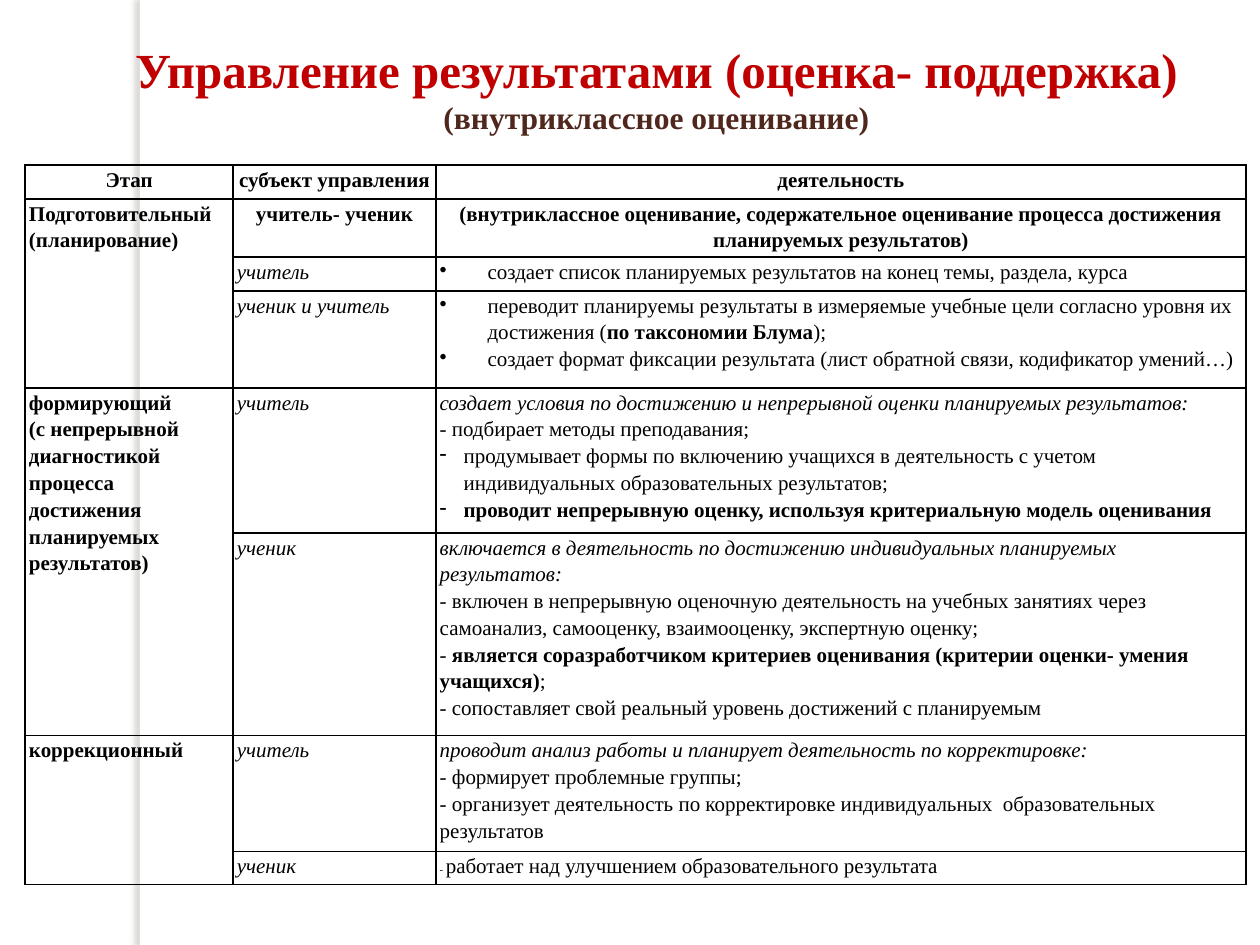
from dataclasses import dataclass

from lxml import etree
from pptx import Presentation
from pptx import util as u
from pptx.dml import color
from pptx.enum import shapes, text
from pptx.oxml import ns


@dataclass(frozen=True)
class Theme:
    font: str = "Times New Roman"
    ink: str = "000000"
    red: str = "C00000"
    brown: str = "4F271C"
    paper: str = "FFFFFF"
    shade: str = "736F63"
    head: int = 28
    sub: int = 18
    body: int = 12
    tiny: int = 6


THEME = Theme()
COLS = [1.65, 1.61, 6.43]
ROWS = [0.27, 0.13, 0.27, 0.77, 0.99, 1.27, 0.78, 0.26]
SPANS = [(1, 3), (4, 5), (6, 7)]
LISTS = {"• ": ("•", 0.38), "– ": ("-", 0.19)}

# Marks: ^ centred, "• " and "– " list items, *bold*, _italic_, ~tiny~
CELLS = [
    [["^*Этап*"], ["^*субъект управления*"], ["^*деятельность*"]],
    [["*Подготовительный*", "*(планирование)*"],
     ["^*учитель- ученик*"],
     ["^*(внутриклассное оценивание, содержательное оценивание процесса "
      "достижения планируемых результатов)*"]],
    [[], ["_учитель_"],
     ["• создает список планируемых результатов на конец темы, раздела, курса"]],
    [[], ["_ученик и учитель_"],
     ["• переводит планируемы результаты в измеряемые учебные цели согласно "
      "уровня их достижения (*по таксономии Блума*);",
      "• создает формат фиксации результата (лист обратной связи, "
      "кодификатор умений…)"]],
    [["*формирующий*",
      "*(с непрерывной диагностикой процесса достижения планируемых результатов)*"],
     ["_учитель_"],
     ["_создает условия по достижению и непрерывной оценки планируемых "
      "результатов:_",
      "- подбирает методы преподавания;",
      "– продумывает формы по включению учащихся в деятельность с учетом "
      "индивидуальных образовательных результатов;",
      "– *проводит непрерывную оценку, используя критериальную модель оценивания*"]],
    [[], ["_ученик_"],
     ["_включается в деятельность по достижению индивидуальных планируемых "
      "результатов:_",
      "- включен в непрерывную оценочную деятельность на учебных занятиях через "
      "самоанализ, самооценку, взаимооценку, экспертную оценку;",
      "- *является соразработчиком критериев оценивания (критерии оценки- умения "
      "учащихся)*;",
      "- сопоставляет свой реальный уровень достижений с планируемым"]],
    [["*коррекционный*"], ["_учитель_"],
     ["_проводит анализ работы и планирует деятельность по корректировке:_",
      "- формирует проблемные группы;",
      "- организует деятельность по корректировке индивидуальных  "
      "образовательных результатов"]],
    [[], ["_ученик_"],
     ["~- ~работает над улучшением образовательного результата"]],
]


def put(item, props):
    for name, value in props.items():
        setattr(item, name, value)


def rgb(code):
    return color.RGBColor.from_string(code)


def sub(parent, tag, **attrs):
    """Append a DrawingML child element."""
    return etree.SubElement(parent, ns.qn(f"a:{tag}"), attrs)


def add_run(par, words, size, tone, bold=False, italic=False):
    run = par.add_run()
    run.text = words
    put(run.font, {"name": THEME.font, "size": u.Pt(size),
                   "bold": bold, "italic": italic})
    run.font.color.rgb = rgb(tone)


def add_strip(slide):
    """White vertical strip that casts a soft shadow to the left."""
    strip = slide.shapes.add_shape(
        shapes.MSO_SHAPE.RECTANGLE,
        u.Inches(1.11), 0, u.Inches(0.08), u.Inches(7.5))
    strip.fill.solid()
    strip.fill.fore_color.rgb = rgb(THEME.paper)
    strip.line.fill.background()
    strip.shadow.inherit = False
    effects = strip.element.spPr.find(ns.qn("a:effectLst"))
    shadow = sub(effects, "outerShdw", blurRad=str(u.Pt(3)), dist=str(u.Pt(3)),
                 dir=str(180 * 60000), algn="tl", rotWithShape="0")
    tone = sub(shadow, "srgbClr", val=THEME.shade)
    sub(tone, "alpha", val="25000")


def add_title(slide):
    box = slide.shapes.add_textbox(
        u.Inches(0.51), 0, u.Inches(9.4), u.Inches(1.39))
    put(box.text_frame, {"word_wrap": True,
                         "vertical_anchor": text.MSO_ANCHOR.MIDDLE})
    par = box.text_frame.paragraphs[0]
    par.alignment = text.PP_ALIGN.CENTER
    add_run(par, "Управление результатами (оценка- поддержка)",
            THEME.head, THEME.red, bold=True)
    par.add_line_break()
    add_run(par, "(внутриклассное оценивание)",
            THEME.sub, THEME.brown, bold=True)


def add_marked(par, line):
    """Write one marked line as a formatted paragraph."""
    par.line_spacing = 1.15
    if line.startswith("^"):
        par.alignment = text.PP_ALIGN.CENTER
        line = line[1:]
    if line[:2] in LISTS:
        sign, gap = LISTS[line[:2]]
        line = line[2:]
        props = par._p.get_or_add_pPr()
        indent = u.Inches(gap)
        put_marks = {"marL": str(indent), "indent": str(-indent)}
        for name, value in put_marks.items():
            props.set(name, value)
        sub(props, "buChar", char=sign)
    state = {"*": False, "_": False, "~": False}
    words = ""
    for sign in line + "\n":
        if sign not in state and sign != "\n":
            words += sign
            continue
        if words:
            add_run(par, words, THEME.tiny if state["~"] else THEME.body,
                    THEME.ink, state["*"], state["_"])
            words = ""
        if sign in state:
            state[sign] = not state[sign]


def add_edges(cell):
    props = cell._tc.get_or_add_tcPr()
    for side in ("lnL", "lnR", "lnT", "lnB"):
        edge = sub(props, side, w=str(u.Pt(1)))
        sub(sub(edge, "solidFill"), "srgbClr", val=THEME.ink)


def fill_cell(cell, lines):
    put(cell, {"margin_left": u.Inches(0.03), "margin_right": u.Inches(0.03),
               "margin_top": 0, "margin_bottom": 0})
    add_edges(cell)
    cell.fill.background()
    frame = cell.text_frame
    for i, line in enumerate(lines):
        add_marked(frame.add_paragraph() if i else frame.paragraphs[0], line)


def add_grid(slide):
    table = slide.shapes.add_table(
        len(ROWS), len(COLS), u.Inches(0.2), u.Inches(1.31),
        u.Inches(sum(COLS)), u.Inches(sum(ROWS))).table
    put(table, {"first_row": False, "horz_banding": False})
    for col, width in zip(table.columns, COLS):
        col.width = u.Inches(width)
    for row, height in zip(table.rows, ROWS):
        row.height = u.Inches(height)
    for r, line in enumerate(CELLS):
        for c, lines in enumerate(line):
            fill_cell(table.cell(r, c), lines)
    for first, last in SPANS:
        table.cell(first, 0).merge(table.cell(last, 0))


def main():
    deck = Presentation()
    put(deck, {"slide_width": u.Inches(10), "slide_height": u.Inches(7.5)})
    slide = deck.slides.add_slide(deck.slide_layouts[6])
    slide.background.fill.solid()
    slide.background.fill.fore_color.rgb = rgb(THEME.paper)
    add_strip(slide)
    add_title(slide)
    add_grid(slide)
    deck.save("out.pptx")


if __name__ == "__main__":
    main()
